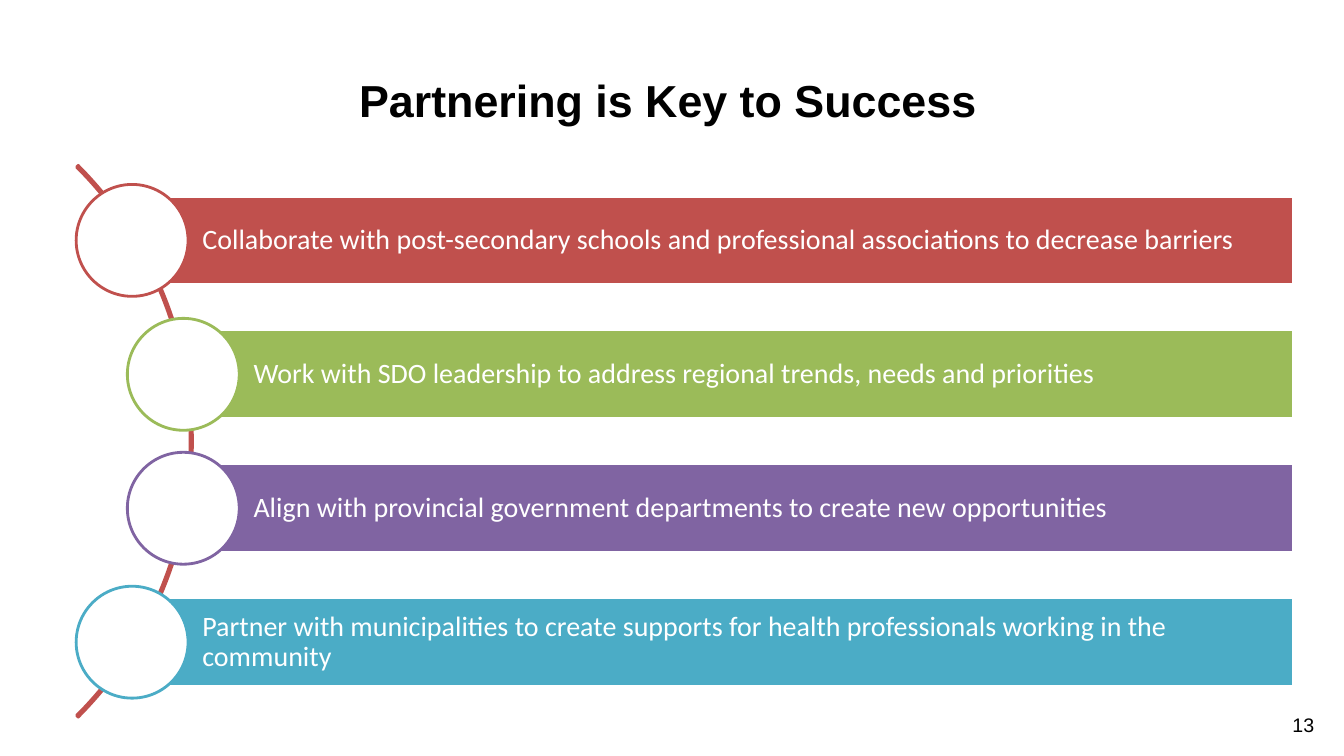
from pptx import Presentation
from pptx import util as u
from pptx.dml.color import RGBColor
from pptx.enum import shapes, text

COLORS = {
    "red": "C0504D",
    "green": "9BBB59",
    "purple": "8064A2",
    "teal": "4BACC6",
    "white": "FFFFFF",
    "black": "000000",
}

# Each partnership: wording, colour, centre of its circle from the left
PARTNERSHIPS = [
    ("Collaborate with post-secondary schools and professional associations "
     "to decrease barriers", "red", 3.33),
    ("Work with SDO leadership to address regional trends, needs and priorities",
     "green", 4.62),
    ("Align with provincial government departments to create new opportunities",
     "purple", 4.62),
    ("Partner with municipalities to create supports for health professionals "
     "working in the community", "teal", 3.33),
]

TITLE_FONT = {"name": "Arial", "size": u.Pt(32), "bold": True}
NUMBER_FONT = {"name": "Arial", "size": u.Pt(14)}
BAR_FONT = {"name": "Calibri", "size": u.Pt(20)}


def rgb(color):
    return RGBColor.from_string(COLORS[color])


def set_attributes(target, values):
    for name, value in values.items():
        setattr(target, name, value)


def write(frame, wording, font, color, align, insets=(0, 0, 0, 0), **frame_format):
    """Fill a text frame with one formatted paragraph."""
    sides = ("margin_left", "margin_top", "margin_right", "margin_bottom")
    set_attributes(frame, dict(zip(sides, map(u.Cm, insets))))
    set_attributes(frame, {"word_wrap": True, **frame_format})
    paragraph = frame.paragraphs[0]
    paragraph.text = wording
    paragraph.alignment = align
    set_attributes(paragraph.font, font)
    paragraph.font.color.rgb = rgb(color)
    return paragraph


def add_outlined(slide, preset, box, fill, line):
    """Add a preset shape with a 2 pt outline; box is in centimetres."""
    shape = slide.shapes.add_shape(preset, *map(u.Cm, box))
    shape.shadow.inherit = False
    if fill:
        shape.fill.solid()
        shape.fill.fore_color.rgb = rgb(fill)
    else:
        shape.fill.background()
    shape.line.color.rgb = rgb(line)
    shape.line.width = u.Pt(2)
    return shape


def add_title(slide, left, top, width, height):
    title = slide.shapes.title
    set_attributes(title, {"left": u.Cm(left), "top": u.Cm(top),
                           "width": u.Cm(width), "height": u.Cm(height)})
    write(title.text_frame, "Partnering is Key to Success", TITLE_FONT, "black",
          text.PP_ALIGN.CENTER, vertical_anchor=text.MSO_ANCHOR.MIDDLE,
          auto_size=text.MSO_AUTO_SIZE.NONE)


def add_partnership(slide, center_x, center_y, right, wording, color):
    """Draw one bar with the circle centred on its left end."""
    bar_height, diameter = 2.23, 2.82
    bar = add_outlined(slide, shapes.MSO_SHAPE.RECTANGLE,
                       (center_x, center_y - bar_height / 2,
                        right - center_x, bar_height), color, "white")
    paragraph = write(bar.text_frame, wording, BAR_FONT, "white",
                      text.PP_ALIGN.LEFT, (1.77, 0.15, 0.15, 0.15),
                      vertical_anchor=text.MSO_ANCHOR.MIDDLE)
    paragraph.line_spacing = 0.9
    add_outlined(slide, shapes.MSO_SHAPE.OVAL,
                 (center_x - diameter / 2, center_y - diameter / 2,
                  diameter, diameter), "white", color)


def add_partnership_list(slide, top, right, height):
    # Arc behind the circles, a quarter turn facing right
    radius, arc_x, middle = 9.83, -4.98, top + height / 2
    arc = add_outlined(slide, shapes.MSO_SHAPE.BLOCK_ARC,
                       (arc_x - radius, middle - radius, 2 * radius, 2 * radius),
                       None, "red")
    for index, value in enumerate((189, 27, 0.003)):
        arc.adjustments[index] = value

    # Evenly spaced bars
    pitch = height / len(PARTNERSHIPS)
    for row, (wording, color, center_x) in enumerate(PARTNERSHIPS):
        add_partnership(slide, center_x, top + (row + 0.5) * pitch, right,
                        wording, color)


def add_page_number(slide, left, top, width, height):
    box = slide.shapes.add_textbox(*map(u.Cm, (left, top, width, height)))
    paragraph = write(box.text_frame, "13", NUMBER_FONT, "black",
                      text.PP_ALIGN.LEFT, (0.03, 0, 0, 0), word_wrap=False)
    paragraph.line_spacing = u.Pt(16.5)


def main():
    deck = Presentation()
    deck.slide_width, deck.slide_height = u.Cm(33.87), u.Cm(19.05)
    slide = deck.slides.add_slide(deck.slide_layouts[5])
    add_title(slide, 8.74, 1.7, 16.2, 1.63)
    add_partnership_list(slide, top=4.37, right=32.59, height=13.5)
    add_page_number(slide, 32.54, 17.98, 0.69, 0.76)
    deck.save("out.pptx")


if __name__ == "__main__":
    main()
